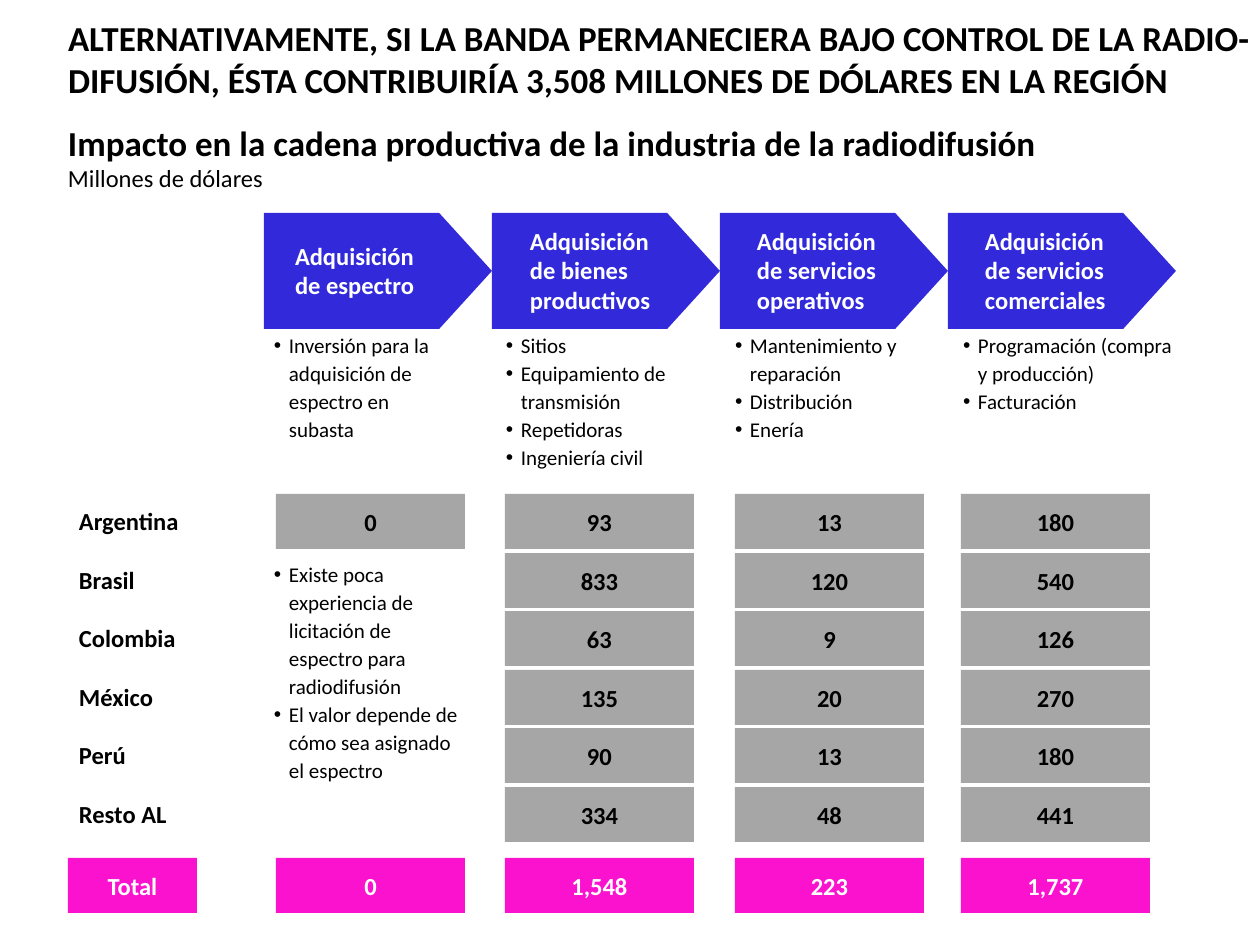
from lxml.etree import SubElement
from pptx import Presentation
from pptx.dml.color import RGBColor
from pptx.enum.shapes import MSO_SHAPE as SHAPE
from pptx.enum.text import MSO_ANCHOR as ANCHOR, MSO_AUTO_SIZE as AUTO, PP_ALIGN as ALIGN
from pptx.oxml.ns import qn
from pptx.util import Emu, Pt

BLACK = RGBColor(0, 0, 0)
WHITE = RGBColor(255, 255, 255)
BLUE = RGBColor(0x32, 0x2A, 0xDA)
GRAY = RGBColor(0xA6, 0xA6, 0xA6)
PINK = RGBColor(0xFA, 0x12, 0xCE)

SCALE = 914400 / 126
HEADING = {"size": Pt(20), "bold": True, "name": "Calibri"}
STRONG = {"size": Pt(14), "bold": True, "name": "Calibri"}
UNIT = {"size": Pt(14), "bold": False, "name": "Calibri"}
BULLET = {"size": Pt(12), "bold": False, "name": "Calibri"}
NO_INSET = (0, 0, 0, 0)
TEXT_INSET = (13, 6, 13, 6)

TITLE = ("ALTERNATIVAMENTE, SI LA BANDA PERMANECIERA BAJO CONTROL DE LA RADIO-"
         "DIFUSIÓN, ÉSTA CONTRIBUIRÍA 3,508 MILLONES DE DÓLARES EN LA REGIÓN")
SUBTITLE = "Impacto en la cadena productiva de la industria de la radiodifusión"
STAGES = [
    ("Adquisición de espectro", (295, 241, 144, 59)),
    ("Adquisición de bienes productivos", (530, 226, 144, 89)),
    ("Adquisición de servicios operativos", (757, 226, 144, 89)),
    ("Adquisición de servicios comerciales", (985, 226, 144, 89)),
]
ACTIVITIES = [
    (["Inversión para la adquisición de espectro en subasta"], (261, 324, 193, 126)),
    (["Sitios", "Equipamiento de transmisión", "Repetidoras", "Ingeniería civil"],
     (493, 324, 215, 154)),
    (["Mantenimiento y reparación", "Distribución", "Enería"], (722, 324, 213, 126)),
    (["Programación (compra y producción)", "Facturación"], (950, 324, 238, 126)),
]
SPECTRUM_NOTES = [
    "Existe poca experiencia de licitación de espectro para radiodifusión",
    "El valor depende de cómo sea asignado el espectro",
]
COUNTRIES = ["Argentina", "Brasil", "Colombia", "México", "Perú", "Resto AL"]
COLUMNS = [
    (276, [0]),
    (505, [93, 833, 63, 135, 90, 334]),
    (735, [13, 120, 9, 20, 13, 48]),
    (961, [180, 540, 126, 270, 180, 441]),
]
TABLE_TOP, TABLE_SPAN, TOTAL_TOP = 494, 293, 858
CELL_W, CELL_H = 189, 55


def px(n):
    """Turn whole pixels into EMU."""
    return Emu(round(n * SCALE))


def place(sp, box):
    """Move and size a shape to a pixel box."""
    for name, n in zip(("left", "top", "width", "height"), box):
        setattr(sp, name, px(n))


def write(sp, lines, color=BLACK, align=ALIGN.LEFT, anchor=ANCHOR.TOP, inset=NO_INSET):
    """Fill a shape with one paragraph for each (text, font format) pair."""
    tf = sp.text_frame
    frame = {"word_wrap": True, "auto_size": AUTO.NONE, "vertical_anchor": anchor}
    sides = ("margin_left", "margin_top", "margin_right", "margin_bottom")
    frame.update(zip(sides, map(px, inset)))
    for name, value in frame.items():
        setattr(tf, name, value)
    for i, (text, fmt) in enumerate(lines):
        p = tf.add_paragraph() if i else tf.paragraphs[0]
        p.alignment = align
        p.space_before = Pt(0)
        r = p.add_run()
        r.text = text
        r.font.color.rgb = color
        for name, value in fmt.items():
            setattr(r.font, name, value)


def add_label(shapes, box, lines, color=BLACK, inset=NO_INSET):
    """Add a text box."""
    write(shapes.add_textbox(*map(px, box)), lines, color, inset=inset)


def add_block(shapes, kind, box, fill):
    """Add a flat filled shape without outline."""
    sp = shapes.add_shape(kind, *map(px, box))
    sp.shadow.inherit = False
    sp.fill.solid()
    sp.fill.fore_color.rgb = fill
    sp.line.fill.background()
    return sp


def add_cell(shapes, box, text, fill, color):
    """Add a rectangle with centred bold text."""
    sp = add_block(shapes, SHAPE.RECTANGLE, box, fill)
    write(sp, [(text, STRONG)], color, ALIGN.CENTER, ANCHOR.MIDDLE)


def add_stage(shapes, index, text, box):
    """Add one grouped arrow of the value chain with its label."""
    group = shapes.add_group_shape().shapes
    sp = add_block(group, SHAPE.PENTAGON, (264 + 228 * index, 213, 228, 116), BLUE)
    sp.adjustments[0] = 0.455
    add_label(group, box, [(text, STRONG)], WHITE)


def fill_list(sp, items):
    """Write a bulleted list into a placeholder or text box."""
    write(sp, [(item, BULLET) for item in items], inset=TEXT_INSET)
    for p in sp.text_frame.paragraphs:
        p.line_spacing = Pt(16)
        pPr = p._p.get_or_add_pPr()
        pPr.set("marL", str(px(15)))
        pPr.set("indent", str(px(-15)))
        clr = SubElement(pPr, qn("a:buClr"))
        SubElement(clr, qn("a:srgbClr"), val=str(BLACK))
        SubElement(pPr, qn("a:buFont"), typeface="Arial")
        SubElement(pPr, qn("a:buChar"), char="•")


def add_table_blocks(shapes):
    """Add the country labels, the value cells and the totals."""
    offsets = [round(TABLE_SPAN * i / (len(COUNTRIES) - 1)) for i in range(len(COUNTRIES))]
    for country, dy in zip(COUNTRIES, offsets):
        add_label(shapes, (66, 500 + dy, 140, 42), [(country, STRONG)], inset=TEXT_INSET)
    for left, values in COLUMNS:
        for value, dy in zip(values, offsets):
            add_cell(shapes, (left, TABLE_TOP + dy, CELL_W, CELL_H), str(value), GRAY, BLACK)
        add_cell(shapes, (left, TOTAL_TOP, CELL_W, CELL_H), f"{sum(values):,}", PINK, WHITE)
    add_cell(shapes, (68, TOTAL_TOP, 129, CELL_H), "Total", PINK, WHITE)


def main():
    """Build the slide and save it."""
    prs = Presentation()
    prs.slide_width, prs.slide_height = px(1260), px(945)
    s = prs.slides.add_slide(prs.slide_layouts.get_by_name("Comparison"))
    shapes = s.shapes
    place(shapes.title, (68, 16, 1192, 84))
    write(shapes.title, [(TITLE, HEADING)])
    add_label(shapes, (68, 121, 1019, 72), [(SUBTITLE, HEADING), ("Millones de dólares", UNIT)])
    for i, (text, box) in enumerate(STAGES):
        add_stage(shapes, i, text, box)
    for idx, (items, box) in enumerate(ACTIVITIES, 1):
        sp = s.placeholders[idx]
        place(sp, box)
        fill_list(sp, items)
    add_table_blocks(shapes)
    fill_list(shapes.add_textbox(*map(px, (261, 553, 220, 239))), SPECTRUM_NOTES)
    for sp in list(s.placeholders):
        if not sp.text_frame.text:
            sp.element.getparent().remove(sp.element)
    prs.save("out.pptx")


if __name__ == "__main__":
    main()
